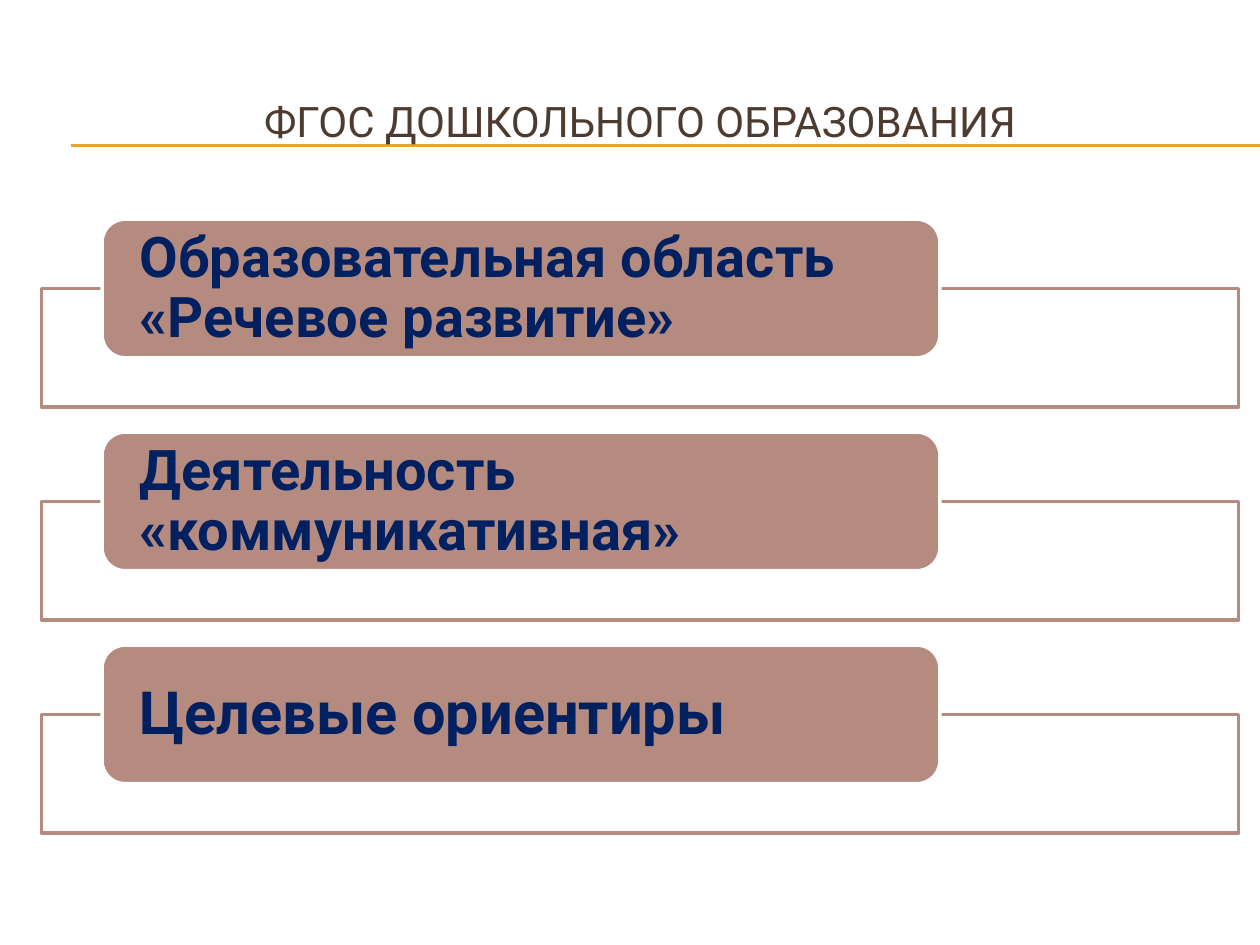
from lxml import etree
from pptx import Presentation
from pptx import util as u
from pptx.dml.color import RGBColor
from pptx.enum import shapes, text
from pptx.oxml.ns import qn

TITLE = "ФГОС ДОШКОЛЬНОГО ОБРАЗОВАНИЯ"
TOPICS = [
    ("Образовательная область «Речевое развитие»", 32),
    ("Деятельность «коммуникативная»", 32),
    ("Целевые ориентиры", 34),
]
COLORS = {
    "rule": "F0A22E",
    "title": "4E3B30",
    "clay": "B58B80",
    "white": "FFFFFF",
    "navy": "002060",
}
FONT = "Roboto"
RULE_LEFT, RULE_RIGHT = 0.56, 10
RULE_HEIGHTS = (1.15, 1.16)
TITLE_AREA = (0.33, 0.5, 9.5, 0.92)
FIRST_TOP, STEP = 1.74, 1.69
FRAME = (0.33, 0.55, 9.5, 0.94)
LABEL = (0.81, 0, 6.65, 1.1)
LABEL_TEXT = (0.86, 0.06, 6.54, 0.99)


def color(name):
    return RGBColor.from_string(COLORS[name])


def inches(area, down=0):
    left, top, width, height = area
    return [u.Inches(round(n, 2)) for n in (left, top + down, width, height)]


def add_rule(page, height):
    rule = page.shapes.add_connector(
        shapes.MSO_CONNECTOR.STRAIGHT,
        u.Inches(RULE_LEFT), u.Inches(height), u.Inches(RULE_RIGHT), u.Inches(height))
    rule.line.color.rgb = color("rule")
    rule.line.width = u.Pt(0.75)
    etree.SubElement(rule._element.spPr, qn("a:effectLst"))


def add_panel(page, kind, area, down, fill, line):
    panel = page.shapes.add_shape(kind, *inches(area, down))
    panel.shadow.inherit = False
    panel.fill.solid()
    panel.fill.fore_color.rgb = color(fill)
    panel.line.color.rgb = color(line)
    panel.line.width = u.Pt(2)
    return panel


def set_opacity(panel, percent):
    tint = panel._element.spPr.find(qn("a:solidFill")).find(qn("a:srgbClr"))
    etree.SubElement(tint, qn("a:alpha"), val=str(percent * 1000))


def add_words(page, area, down, words, size, ink, bold=False):
    box = page.shapes.add_textbox(*inches(area, down))
    frame = box.text_frame
    frame.word_wrap = True
    frame.vertical_anchor = text.MSO_ANCHOR.MIDDLE
    para = frame.paragraphs[0]
    span = para.add_run()
    span.text = words
    span.font.name = FONT
    span.font.size = u.Pt(size)
    span.font.bold = bold
    span.font.color.rgb = color(ink)
    return frame, para


def add_topic(page, down, words, size):
    frame_panel = add_panel(
        page, shapes.MSO_SHAPE.RECTANGLE, FRAME, down, "white", "clay")
    set_opacity(frame_panel, 90)
    add_panel(page, shapes.MSO_SHAPE.ROUNDED_RECTANGLE, LABEL, down, "clay", "white")
    frame, para = add_words(page, LABEL_TEXT, down, words, size, "navy", bold=True)
    frame.margin_left = frame.margin_right = u.Inches(0.25)
    frame.margin_top = frame.margin_bottom = 0
    para.line_spacing = 0.9


def main():
    deck = Presentation()
    deck.slide_width, deck.slide_height = u.Inches(10), u.Inches(7.5)
    page = deck.slides.add_slide(deck.slide_layouts[6])
    for height in RULE_HEIGHTS:
        add_rule(page, height)
    _, heading = add_words(page, TITLE_AREA, 0, TITLE, 24, "title")
    heading.alignment = text.PP_ALIGN.CENTER
    for index, (words, size) in enumerate(TOPICS):
        add_topic(page, FIRST_TOP + index * STEP, words, size)
    deck.save("out.pptx")


if __name__ == "__main__":
    main()
